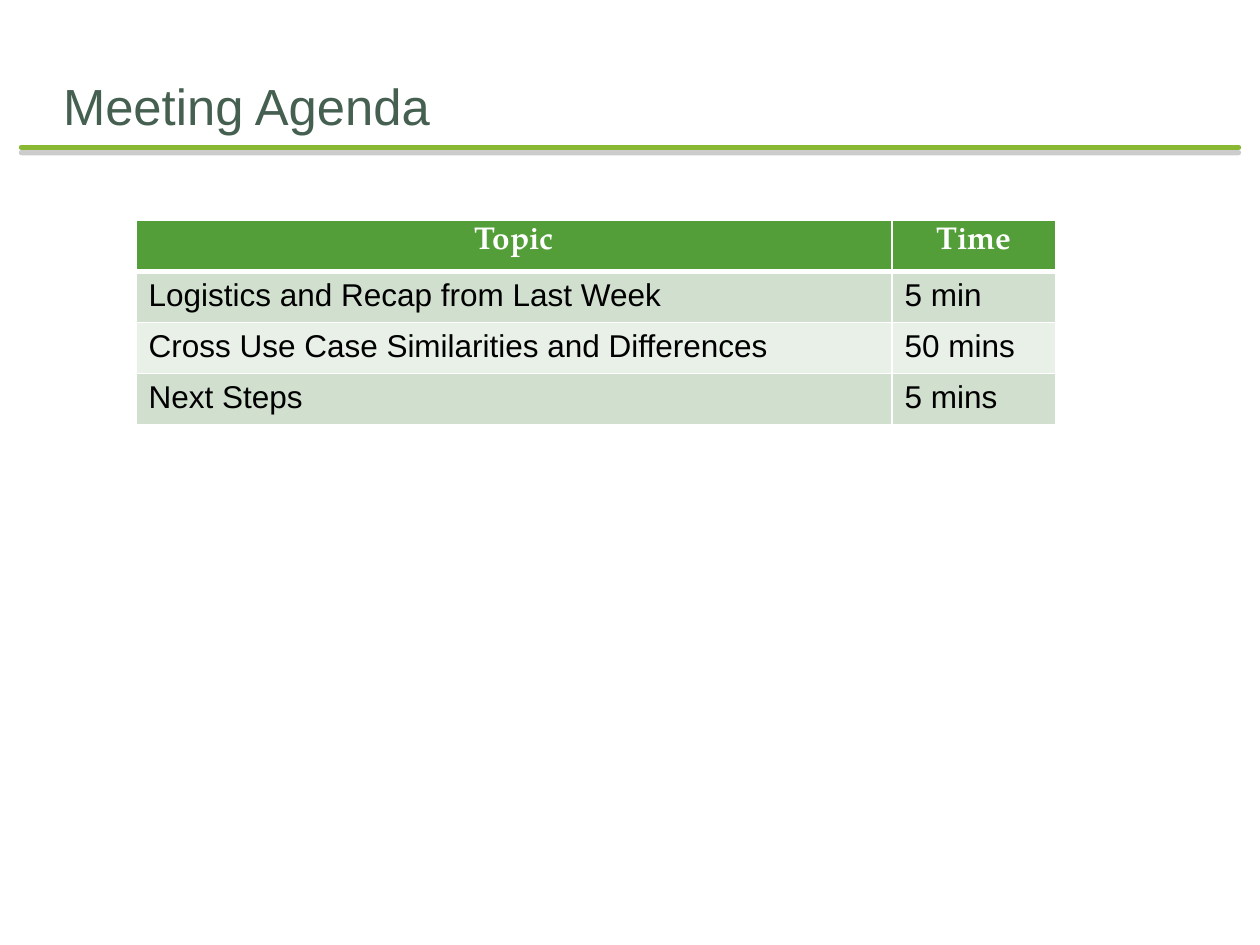
from lxml import etree
from pptx import Presentation
from pptx.dml.color import RGBColor
from pptx.enum import shapes, text
from pptx.oxml import parse_xml
from pptx.oxml.ns import nsdecls
from pptx.util import Inches, Pt

AGENDA = [
    ("Topic", "Time"),
    ("Logistics and Recap from Last Week", "5 min"),
    ("Cross Use Case Similarities and Differences", "50 mins"),
    ("Next Steps", "5 mins"),
]
HEADER_FILL = "549E39"
BAND_FILLS = ("D1DFCE", "E9F0E8")


def rgb(value):
    return RGBColor.from_string(value)


def style_text(p, font, size, color, bold=False):
    for r in p.runs:
        r.font.name = font
        r.font.size = Pt(size)
        r.font.bold = bold
        r.font.color.rgb = rgb(color)


def add_title(slide, left, top, width, height):
    sp = slide.shapes.title
    sp.left, sp.top, sp.width, sp.height = left, top, width, height
    tf = sp.text_frame
    tf.text = "Meeting Agenda"
    tf.word_wrap = True
    tf.auto_size = text.MSO_AUTO_SIZE.NONE
    tf.vertical_anchor = text.MSO_ANCHOR.BOTTOM
    tf.margin_left = tf.margin_right = tf.margin_bottom = 0
    tf.margin_top = Inches(0.05)
    p = tf.paragraphs[0]
    p.alignment = text.PP_ALIGN.LEFT
    style_text(p, "Arial", 29, "455F51")


def add_rule(slide, left, top, width):
    line = slide.shapes.add_connector(
        shapes.MSO_CONNECTOR.STRAIGHT, left, top, left + width, top)
    line.line.color.rgb = rgb("8AB833")
    line.line.width = Pt(3)
    line.line._get_or_add_ln().set("cap", "rnd")
    # Soft grey shadow straight below the line
    line._element.spPr.append(parse_xml(
        f'<a:effectLst {nsdecls("a")}>'
        f'<a:outerShdw blurRad="0" dist="{Pt(3)}" dir="5400000" rotWithShape="0">'
        '<a:srgbClr val="808080"><a:alpha val="40000"/></a:srgbClr>'
        '</a:outerShdw></a:effectLst>'))


def set_borders(cell, bottom):
    tc_pr = cell._tc.get_or_add_tcPr()
    widths = {"lnL": 1, "lnR": 1, "lnT": 1, "lnB": bottom}
    for i, (tag, width) in enumerate(widths.items()):
        tc_pr.insert(i, parse_xml(
            f'<a:{tag} {nsdecls("a")} w="{Pt(width)}">'
            '<a:solidFill><a:srgbClr val="FFFFFF"/></a:solidFill>'
            f'</a:{tag}>'))


def add_agenda(slide, left, top, width, height):
    table = slide.shapes.add_table(
        len(AGENDA), 2, left, top, width, height).table
    time_width = Inches(1.3)
    table.columns[0].width = width - time_width
    table.columns[1].width = time_width
    for i, row in enumerate(AGENDA):
        header = i == 0
        for j, label in enumerate(row):
            cell = table.cell(i, j)
            cell.fill.solid()
            cell.fill.fore_color.rgb = rgb(
                HEADER_FILL if header else BAND_FILLS[(i - 1) % 2])
            # The header border is shared with the first body row
            set_borders(cell, 3 if header else 1)
            if i == 1:
                cell._tc.tcPr.find("{*}lnT").set("w", str(Pt(3)))
            cell.text_frame.text = label
            p = cell.text_frame.paragraphs[0]
            if header:
                p.alignment = text.PP_ALIGN.CENTER
                style_text(p, "TeX Gyre Pagella", 18, "FFFFFF", bold=True)
            else:
                style_text(p, "Arial", 18, "000000")


def main():
    prs = Presentation()
    prs.slide_width, prs.slide_height = Inches(10), Inches(7.5)
    slide = prs.slides.add_slide(prs.slide_layouts[5])
    add_rule(slide, Inches(0.17), Inches(1.17), Inches(9.66))
    add_title(slide, Inches(0.5), Inches(0.5), Inches(9), Inches(0.58))
    add_agenda(slide, Inches(1.08), Inches(1.75), Inches(7.3), Inches(1.62))
    prs.save("out.pptx")


if __name__ == "__main__":
    main()
